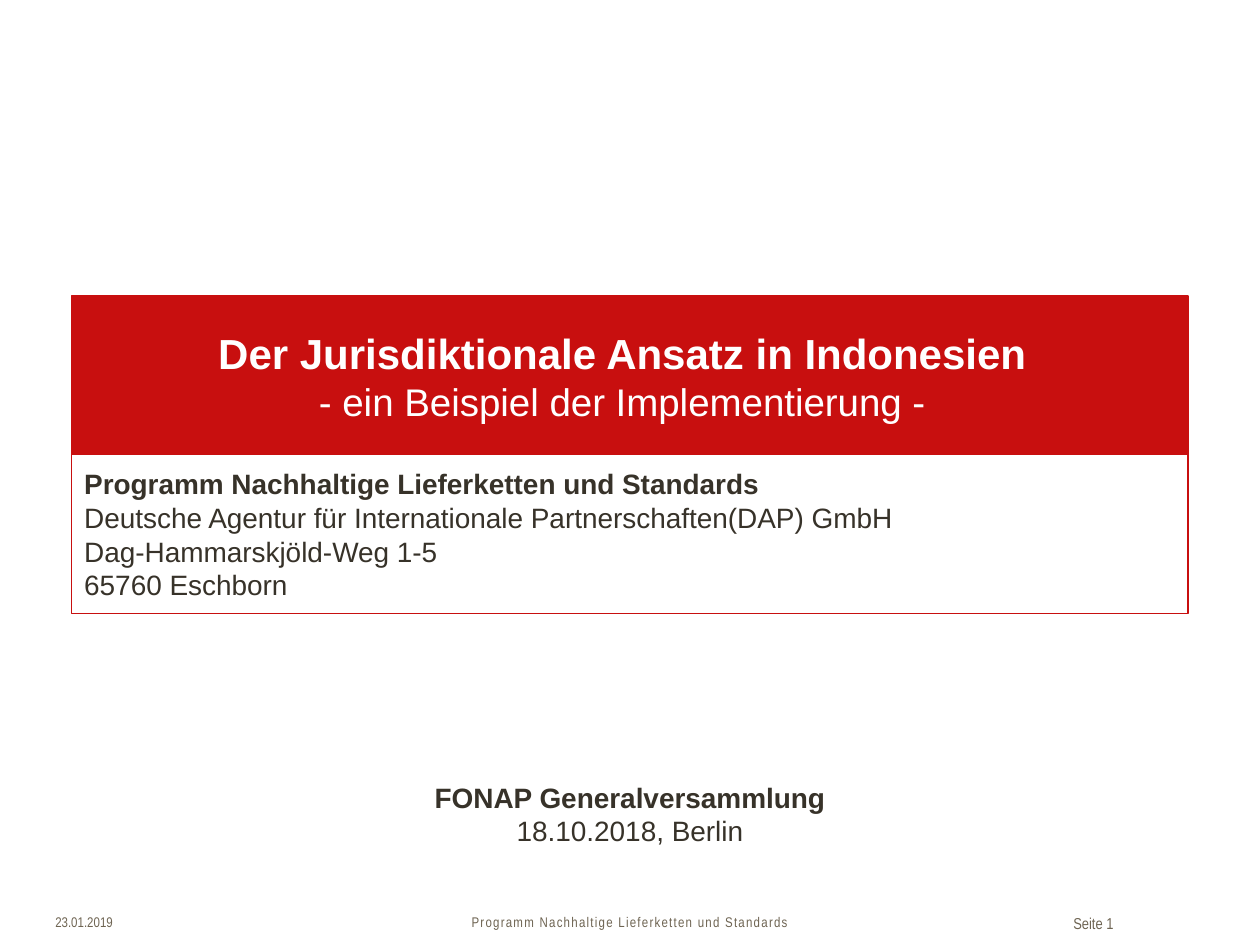
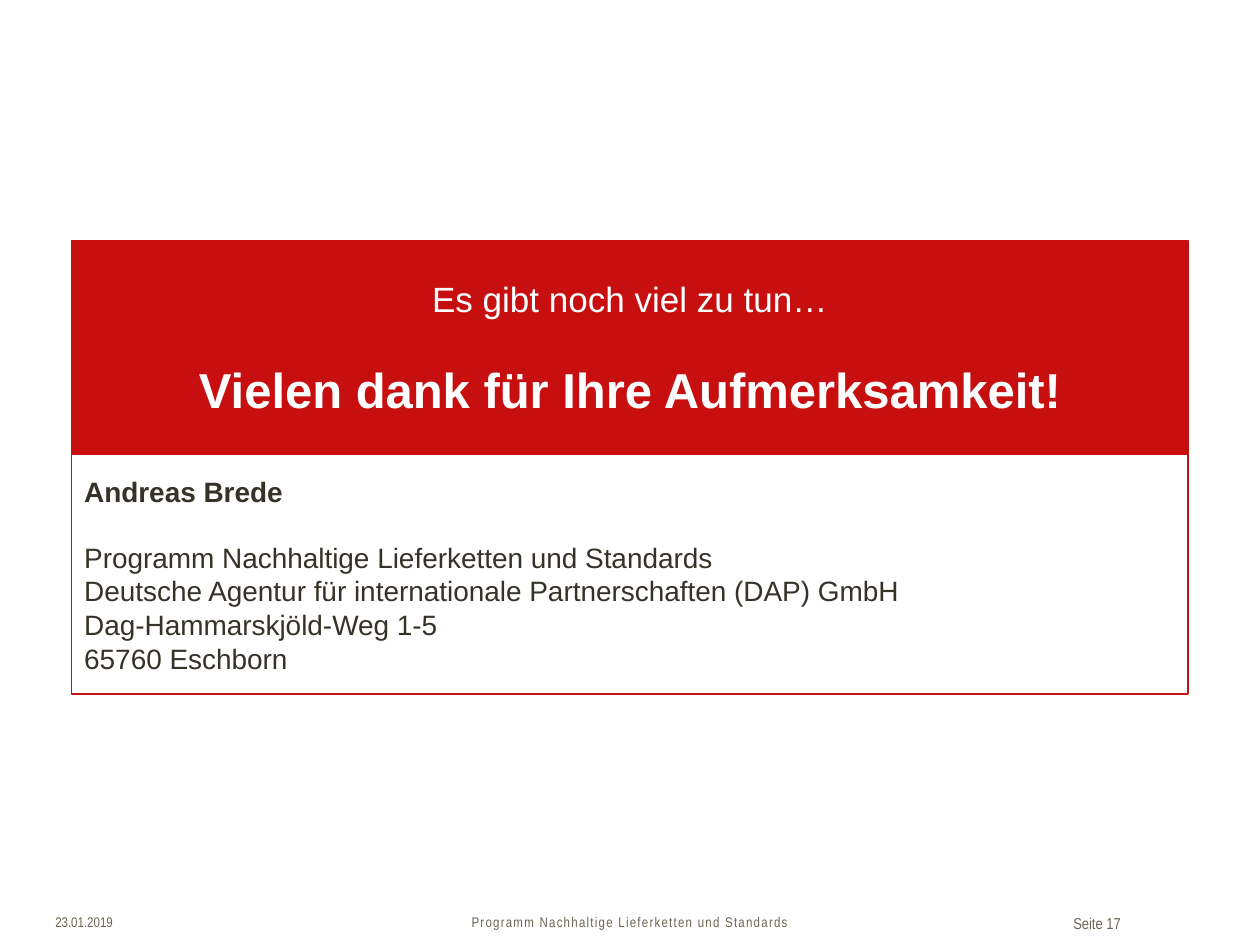
from pptx import Presentation
from pptx.dml.color import RGBColor
from pptx.enum.shapes import MSO_SHAPE
from pptx.enum.text import MSO_ANCHOR, PP_ALIGN
from pptx.util import Inches, Pt

RED = RGBColor(0xC8, 0x0F, 0x0F)
WHITE = RGBColor(0xFF, 0xFF, 0xFF)
DARK = RGBColor(0x37, 0x32, 0x29)
TAUPE = RGBColor(0x6E, 0x64, 0x52)

LEFT, WIDTH, SEAM, FOOT = 0.57, 8.86, 3.61, 7.2
PROGRAM = "Programm Nachhaltige Lieferketten und Standards"
STREET = "Dag-Hammarskjöld-Weg 1-5"
TOWN = "65760 Eschborn"


def put_text(frame, text, size=16, color=DARK, bold=False, font="Arial",
             align=PP_ALIGN.LEFT, before=0, track=None):
    para = frame.paragraphs[0]
    if para.runs:
        para = frame.add_paragraph()
    para.alignment = align
    para.space_before = Pt(before)
    run = para.add_run()
    run.text = text
    run.font.name = font
    run.font.size = Pt(size)
    run.font.bold = bold
    run.font.color.rgb = color
    if track:
        run.font._element.set("spc", str(track))


def add_box(slide, left, top, width, height, anchor=MSO_ANCHOR.TOP):
    box = slide.shapes.add_textbox(Inches(left), Inches(top), Inches(width), Inches(height))
    frame = box.text_frame
    frame.word_wrap = True
    frame.vertical_anchor = anchor
    return frame


def add_panel(slide, top, height, fill=None):
    panel = slide.shapes.add_shape(MSO_SHAPE.RECTANGLE, Inches(LEFT), Inches(top),
                                   Inches(WIDTH), Inches(height))
    panel.shadow.inherit = False
    if fill is None:
        panel.fill.background()
    else:
        panel.fill.solid()
        panel.fill.fore_color.rgb = fill
    panel.line.color.rgb = RED
    panel.line.width = Pt(0.75)
    frame = panel.text_frame
    frame.word_wrap = True
    frame.vertical_anchor = MSO_ANCHOR.MIDDLE
    return frame


def add_banner(slide, height):
    return add_panel(slide, SEAM - height, height, RED)


def add_sender(slide, height, head, lines, gap=0):
    frame = add_panel(slide, SEAM, height)
    put_text(frame, head, bold=True)
    for index, line in enumerate(lines):
        put_text(frame, line, before=0 if index else gap)


def add_footer(slide, page):
    style = dict(font="Arial Narrow", color=TAUPE)
    put_text(add_box(slide, 0.34, FOOT, 1.42, 0.24), "23.01.2019", size=8, **style)
    put_text(add_box(slide, 1.92, FOOT, 6.16, 0.24), PROGRAM, size=8,
             align=PP_ALIGN.CENTER, track=70, **style)
    put_text(add_box(slide, 8.42, FOOT, 1.01, 0.25), f"Seite {page}", size=9, **style)


def make_cover(slide):
    mid = PP_ALIGN.CENTER
    title = add_banner(slide, 1.26)
    title.margin_right = Inches(0.22)
    put_text(title, "Der Jurisdiktionale Ansatz in Indonesien", size=24,
             color=WHITE, bold=True, align=mid)
    put_text(title, "- ein Beispiel der Implementierung -", size=22, color=WHITE, align=mid)
    add_sender(slide, 1.26, PROGRAM, [
        "Deutsche Agentur für Internationale Partnerschaften(DAP) GmbH", STREET, TOWN])
    event = add_box(slide, LEFT, 5.87, WIDTH, 1.18, MSO_ANCHOR.MIDDLE)
    put_text(event, "FONAP Generalversammlung", bold=True, align=mid)
    put_text(event, "18.10.2018, Berlin", align=mid)
    add_footer(slide, 1)


def make_close(slide):
    mid = PP_ALIGN.CENTER
    thanks = add_banner(slide, 1.7)
    put_text(thanks, "Es gibt noch viel zu tun…", size=20, color=WHITE, align=mid)
    put_text(thanks, "Vielen dank für Ihre Aufmerksamkeit!", size=28,
             color=WHITE, bold=True, align=mid, before=23)
    add_sender(slide, 1.9, "Andreas Brede", [
        PROGRAM, "Deutsche Agentur für internationale Partnerschaften (DAP) GmbH",
        STREET, TOWN], gap=18.5)
    add_footer(slide, 17)


def main():
    deck = Presentation()
    deck.slide_width = Inches(10)
    deck.slide_height = Inches(7.5)
    for make in (make_cover, make_close):
        make(deck.slides.add_slide(deck.slide_layouts[6]))
    deck.save("out.pptx")


if __name__ == "__main__":
    main()
